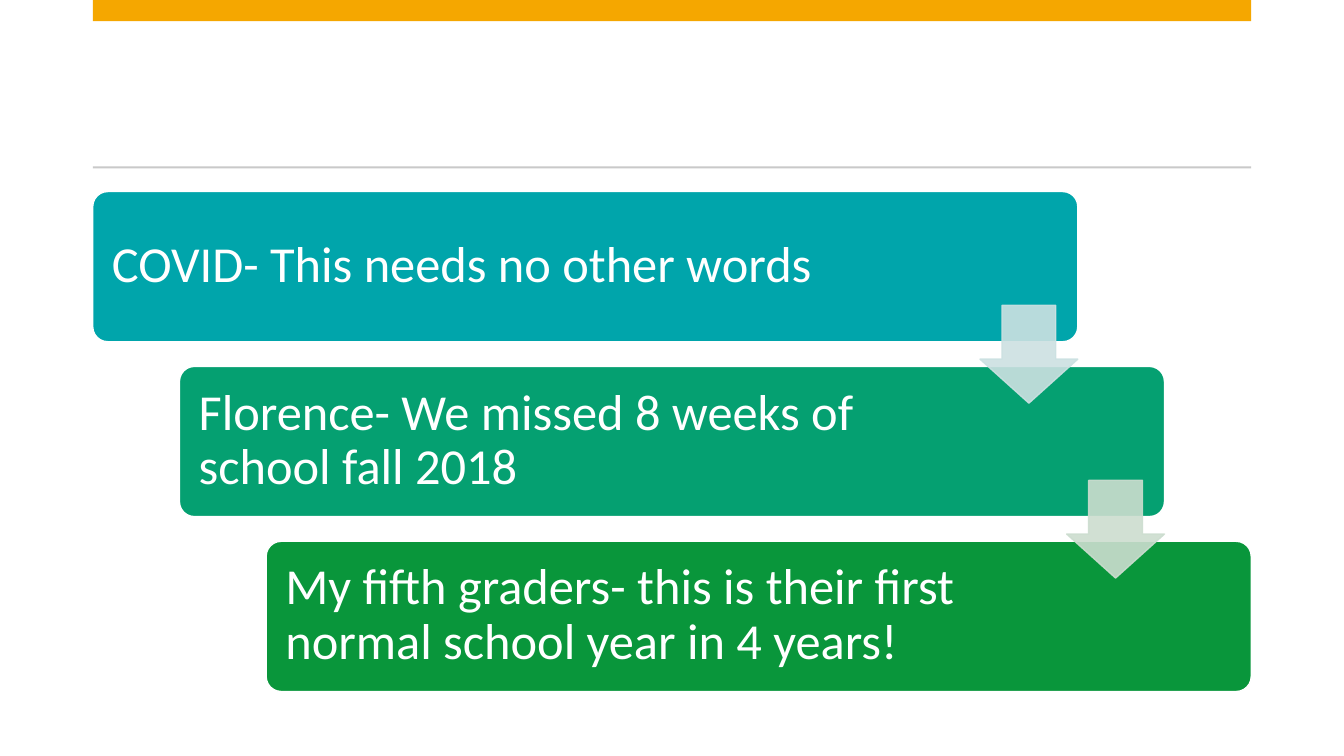
from lxml.etree import SubElement
from pptx import Presentation
from pptx.dml.color import RGBColor
from pptx.enum.shapes import MSO_SHAPE as Kind
from pptx.enum.text import MSO_ANCHOR as Anchor
from pptx.oxml.ns import qn
from pptx.util import Inches, Pt


def color(code):
    return RGBColor.from_string(code)


def fade(shape, percent):
    for fill in shape.element.spPr.iter(qn("a:srgbClr")):
        SubElement(fill, qn("a:alpha"), val=str(percent * 1000))


class Deck:
    font = "Calibri"
    size = 36
    white = "FFFFFF"
    pad = 0.15

    def __init__(self):
        self.prs = Presentation()
        self.prs.slide_width = Inches(13.33)
        self.prs.slide_height = Inches(7.5)
        self.slide = self.prs.slides.add_slide(self.prs.slide_layouts[6])

    def shape(self, kind, box, fill, line=None, adjust=()):
        shape = self.slide.shapes.add_shape(kind, *map(Inches, box))
        shape.shadow.inherit = False
        shape.fill.solid()
        shape.fill.fore_color.rgb = color(fill)
        if line:
            shape.line.color.rgb = color(line)
            shape.line.width = Pt(1)
        else:
            shape.line.fill.background()
        for i, value in enumerate(adjust):
            shape.adjustments[i] = value
        return shape

    def bar(self, top, height, fill):
        self.shape(Kind.RECTANGLE, (0.92, top, 11.49, height), fill)

    def card(self, left, top, fill):
        box = (left, top, 9.77, 1.49)
        self.shape(Kind.ROUNDED_RECTANGLE, box, fill, self.white, [0.1])

    def arrow(self, left, top, fill):
        box = (left, top, 0.97, 0.97)
        shape = self.shape(Kind.DOWN_ARROW, box, fill, fill, [0.55, 0.45])
        fade(shape, 90)

    def text(self, left, top, width, words):
        box = (left, top, width, 1.4)
        frame = self.slide.shapes.add_textbox(*map(Inches, box)).text_frame
        frame.word_wrap = True
        frame.vertical_anchor = Anchor.MIDDLE
        frame.margin_left = frame.margin_right = Inches(self.pad)
        frame.margin_top = frame.margin_bottom = Inches(self.pad)
        para = frame.paragraphs[0]
        para.text = words
        para.line_spacing = 0.9
        para.font.name = self.font
        para.font.size = Pt(self.size)
        para.font.color.rgb = color(self.white)

    def save(self):
        self.prs.save("out.pptx")


def main():
    deck = Deck()
    deck.bar(0, 0.21, "F5A700")
    deck.bar(1.65, 0.02, "C9C9C9")

    steps = [
        ("COVID- This needs no other words", "00A5AB", 8.16),
        ("Florence- We missed 8 weeks of school fall 2018", "05A071", 7.85),
        ("My fifth graders- this is their first normal school year in 4 years!",
         "09963B", 7.85),
    ]
    left, top = 0.92, 1.9
    across, down = 0.86, 1.735
    for i, (words, fill, width) in enumerate(steps):
        x, y = left + i * across, top + i * down
        deck.card(x, y, fill)
        deck.text(x + 0.04, y + 0.04, width, words)

    for i, fill in enumerate(["CCE1E2", "CCDDCF"]):
        deck.arrow(left + 8.8 + i * across, top + 1.13 + i * down, fill)
    deck.save()


if __name__ == "__main__":
    main()
